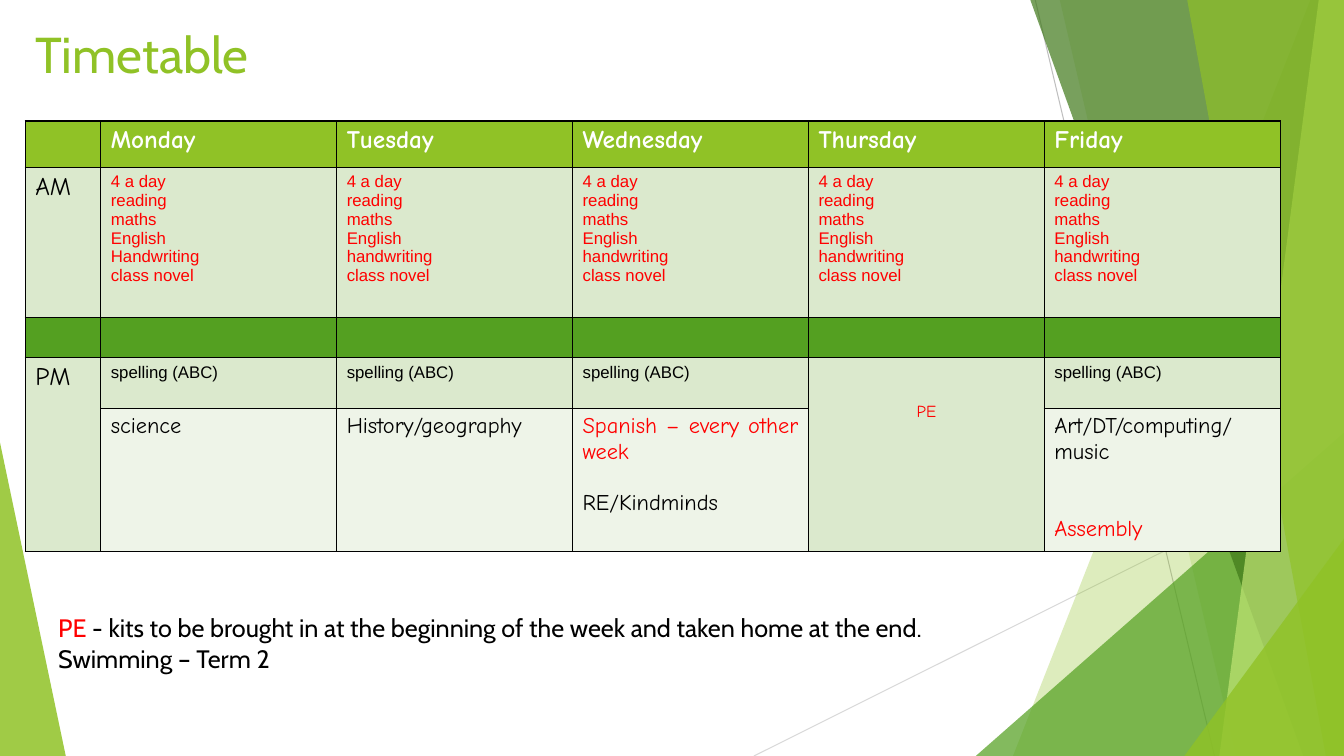
from pptx import Presentation
from pptx.dml.color import RGBColor
from pptx.enum import shapes, text
from pptx.oxml import parse_xml
from pptx.oxml.ns import nsdecls, qn
from pptx.util import Pt

WIDTH, HEIGHT = 960, 540
LIME, GREEN, RED, BLACK = "90C226", "54A021", "FF0000", "000000"
PALE, PALEST = "DBE9CD", "EEF4E8"

HEADER = dict(name="Comic Neue", size=18, bold=True, color="FFFFFF")
HALF_DAY = dict(name="Comic Neue", size=18, color=BLACK)
LESSON = dict(name="Comic Neue", size=16, color=BLACK)
RED_LESSON = dict(LESSON, color=RED)
SMALL = dict(name="Arial", size=12, color=BLACK)
SMALL_RED = dict(SMALL, color=RED)


def rgb(value):
    return RGBColor.from_string(value)


def add_run(paragraph, words, style):
    run = paragraph.add_run()
    run.text = words
    values = dict(style)
    run.font.color.rgb = rgb(values.pop("color"))
    values["size"] = Pt(values["size"])
    for name, value in values.items():
        setattr(run.font, name, value)


def write_lines(frame, lines):
    """Each line is (words, style) or (words, style, paragraph format)."""
    for index, (words, style, *formats) in enumerate(lines):
        paragraph = frame.add_paragraph() if index else frame.paragraphs[0]
        for values in formats:
            for name, value in values.items():
                setattr(paragraph, name, value)
        add_run(paragraph, words, style)


# Decorative background
def add_panel(slide, points, color, opacity):
    scaled = [(round(x * 100), round(y * 100)) for x, y in points]
    builder = slide.shapes.build_freeform(*scaled[0], scale=Pt(1) / 100)
    builder.add_line_segments(scaled[1:], close=True)
    shape = builder.convert_to_shape()
    shape.shadow.inherit = False
    shape.fill.solid()
    shape.fill.fore_color.rgb = rgb(color)
    shape.line.fill.background()
    fill_color = shape._element.spPr.find(qn("a:solidFill"))[0]
    fill_color.append(parse_xml(f'<a:alpha {nsdecls("a")} val="{opacity * 1000}"/>'))


def add_thin_line(slide, start, end, color):
    ends = [Pt(value) for value in (*start, *end)]
    line = slide.shapes.add_connector(shapes.MSO_CONNECTOR.STRAIGHT, *ends)
    line.line.color.rgb = rgb(color)
    line.line.width = Pt(0.75)
    line._element.spPr.append(parse_xml(f'<a:effectLst {nsdecls("a")}/>'))


def add_background(slide, width, height):
    corner = (width, height)
    add_panel(slide, [(0, 316), (47, height), (0, height)], LIME, 85)
    add_thin_line(slide, (538.5, height), (width, 329.5), "D9D9D9")
    add_thin_line(slide, (739.5, 0), (867.5, height), "BFBFBF")

    def add_full_panel(top_x, bottom_x, color, opacity):
        edge = [(top_x, 0), (bottom_x, height), corner, (width, 0)]
        add_panel(slide, edge, color, opacity)

    def add_corner_panel(bottom_x, side_y, color, opacity):
        add_panel(slide, [(bottom_x, height), (width, side_y), corner], color, opacity)

    add_full_panel(936, 723.6, LIME, 30)
    add_full_panel(757, 883, LIME, 20)
    add_corner_panel(697, 309, GREEN, 72)
    add_full_panel(736, 931, "3F7819", 70)
    add_full_panel(942, 871, "C0E474", 70)
    add_full_panel(848, 947, LIME, 65)
    add_corner_panel(846, 385, LIME, 80)


# Timetable grid
def add_borders(cell):
    properties = cell._tc.get_or_add_tcPr()
    for side in "LRTB":
        properties.append(parse_xml(
            f'<a:ln{side} {nsdecls("a")} w="12700"><a:solidFill>'
            f'<a:srgbClr val="{BLACK}"/></a:solidFill></a:ln{side}>'))


def timetable_cells():
    days = ["Monday", "Tuesday", "Wednesday", "Thursday", "Friday"]
    cells = {(0, column): [(day, HEADER)] for column, day in enumerate(days, 1)}
    cells[1, 0] = [("AM", HALF_DAY)]
    cells[3, 0] = [("PM", HALF_DAY)]
    for column, day in enumerate(days, 1):
        writing = "Handwriting" if day == "Monday" else "handwriting"
        subjects = ["4 a day", "reading", "maths", "English", writing, "class novel"]
        cells[1, column] = [(subject, SMALL_RED) for subject in subjects]
        cells[3, column] = [("spelling (ABC)", SMALL)]
    cells[3, 4] = [("PE", dict(SMALL_RED, name="Comic Neue"),
                    dict(alignment=text.PP_ALIGN.CENTER))]
    cells[4, 1] = [("science", LESSON)]
    cells[4, 2] = [("History/geography", LESSON)]
    cells[4, 3] = [
        ("Spanish – every other week", RED_LESSON,
         dict(alignment=text.PP_ALIGN.JUSTIFY)),
        ("RE/Kindminds", LESSON, dict(space_before=Pt(18.4))),
    ]
    cells[4, 5] = [
        ("Art/DT/computing/music", LESSON),
        ("Assembly", RED_LESSON, dict(space_before=Pt(36.8))),
    ]
    return cells


def add_timetable(slide, left, top, width, height):
    row_heights = [33.1, 107.3, 28.8, 36]
    row_heights.append(height - sum(row_heights))
    label_width = 54
    day_width = (width - label_width) / 5
    row_fills = [LIME, PALE, GREEN, PALE, PALEST]

    frame = slide.shapes.add_table(5, 6, Pt(left), Pt(top), Pt(width), Pt(height))
    table = frame.table
    table.first_row = table.horz_banding = False
    for row, row_height in zip(table.rows, row_heights):
        row.height = Pt(row_height)
    for index, column in enumerate(table.columns):
        column.width = Pt(day_width if index else label_width)
    for column in (0, 4):
        table.cell(3, column).merge(table.cell(4, column))

    contents = timetable_cells()
    for row, row_fill in enumerate(row_fills):
        for column in range(6):
            cell = table.cell(row, column)
            add_borders(cell)
            cell.fill.solid()
            cell.fill.fore_color.rgb = rgb(PALE if cell.is_spanned else row_fill)
            if (row, column) in contents:
                write_lines(cell.text_frame, contents[row, column])
            else:
                cell.margin_top = cell.margin_bottom = 0
    table.cell(3, 4).margin_top = Pt(31.5)


# Title and note
def add_text_box(slide, left, top, width, height):
    box = slide.shapes.add_textbox(Pt(left), Pt(top), Pt(width), Pt(height))
    box.text_frame.word_wrap = True
    return box.text_frame


def add_title(slide, *box):
    frame = add_text_box(slide, *box)
    write_lines(frame, [("Timetable", dict(name="Cabin", size=36, color=LIME))])


def add_note(slide, *box):
    frame = add_text_box(slide, *box)
    style = dict(name="Cabin", size=18, color=BLACK)
    write_lines(frame, [("PE", dict(style, color=RED)), ("Swimming – Term 2", style)])
    add_run(frame.paragraphs[0], " - kits to be brought in at the beginning of the "
            "week and taken home at the end.", style)


def main():
    presentation = Presentation()
    presentation.slide_width, presentation.slide_height = Pt(WIDTH), Pt(HEIGHT)
    slide = presentation.slides.add_slide(presentation.slide_layouts[6])
    add_background(slide, WIDTH, HEIGHT)
    add_timetable(slide, 18, 86.4, 896.5, 307.4)
    add_title(slide, 18, 13, 385, 57)
    add_note(slide, 34.5, 434, 689, 73)
    presentation.save("out.pptx")


if __name__ == "__main__":
    main()
